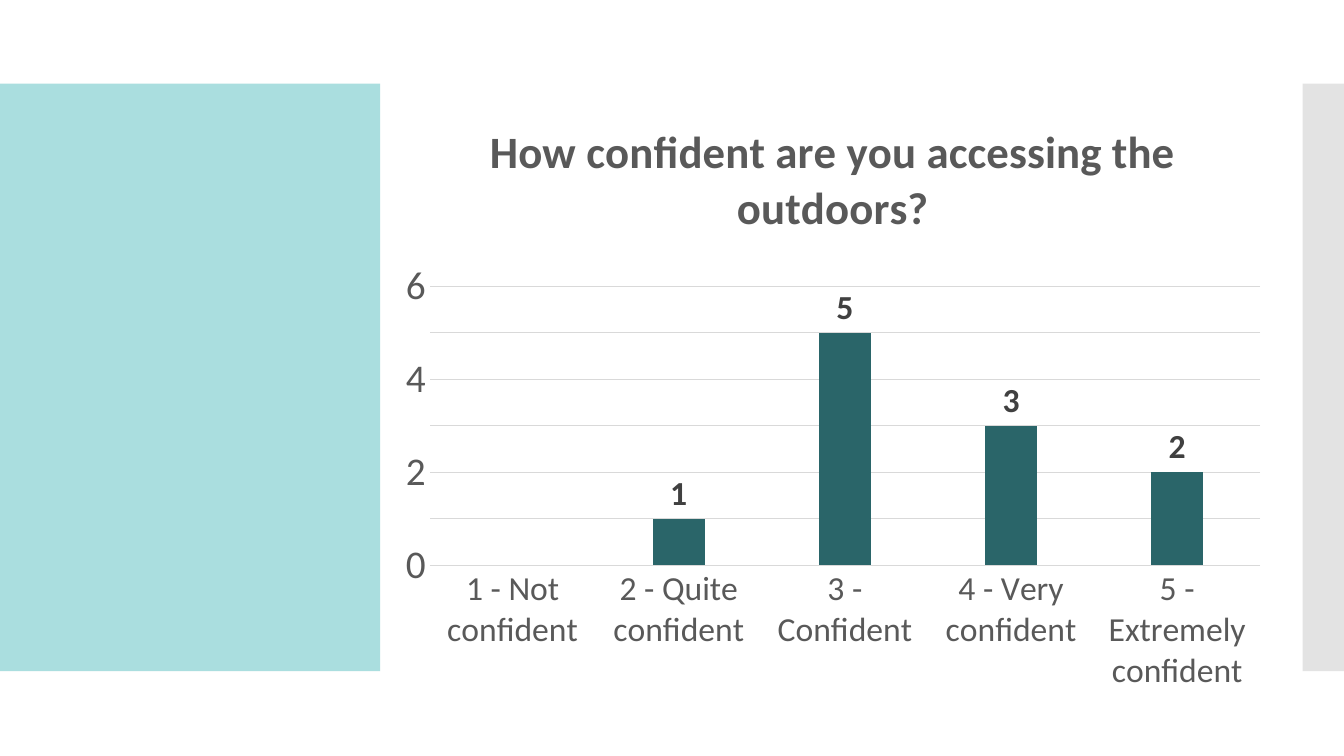
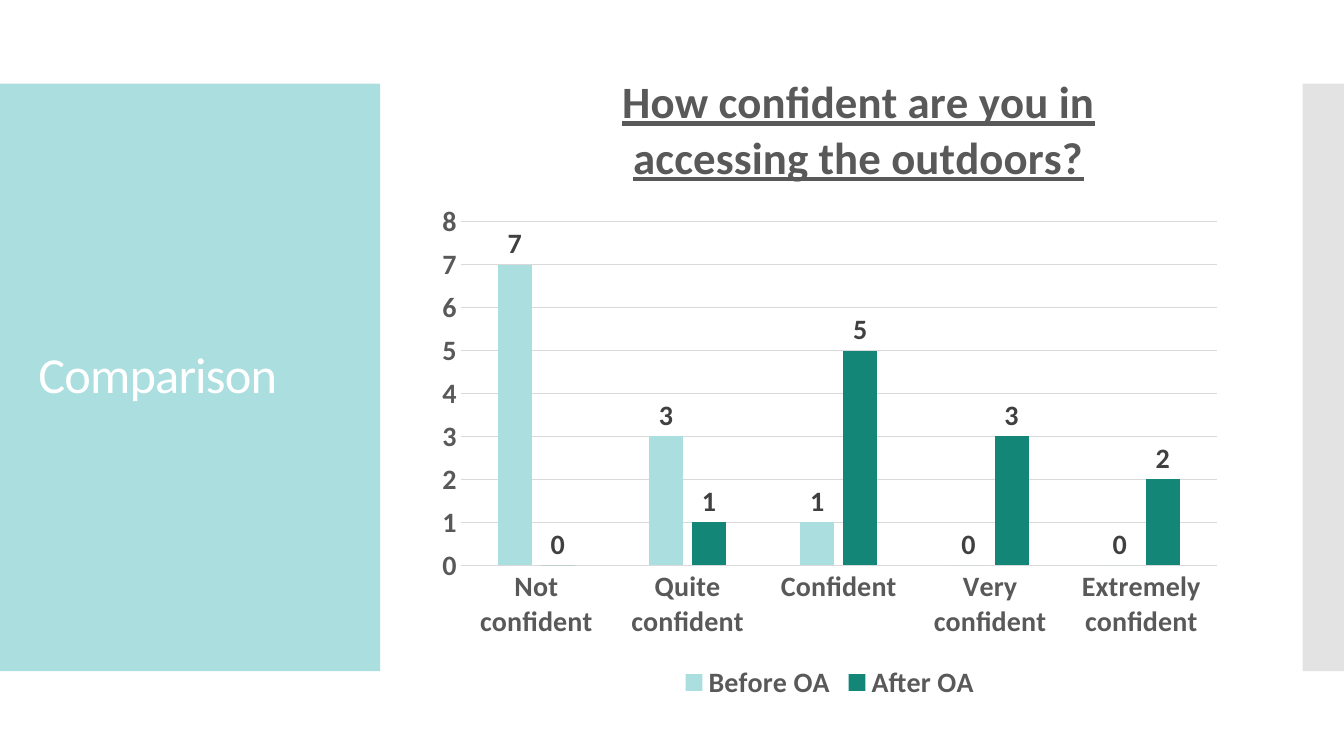
from lxml import etree
from pptx import Presentation
from pptx.chart.data import CategoryChartData
from pptx.dml.color import RGBColor
from pptx.enum.chart import XL_CHART_TYPE as CT, XL_LABEL_POSITION as LP
from pptx.enum.chart import XL_LEGEND_POSITION as LEG, XL_TICK_MARK as TICK
from pptx.enum.shapes import MSO_SHAPE
from pptx.enum.text import MSO_ANCHOR, MSO_AUTO_SIZE, PP_ALIGN
from pptx.oxml.ns import qn
from pptx.util import Inches, Pt

FONT = "Calibri"
AQUA, TEAL, PINE = "AADEDF", "138677", "2A6569"
WHITE, SILVER, RULE = "FFFFFF", "C8C8C8", "D9D9D9"
GREY, DARK = "595959", "404040"
LEVELS = ["Not confident", "Quite confident", "Confident",
          "Very confident", "Extremely confident"]


def rgb(value):
    """Turn a hex string into a colour."""
    return RGBColor.from_string(value)


def style(font, size, color=GREY, bold=False, underline=False):
    """Format a font."""
    font.name, font.size = FONT, Pt(size)
    font.bold, font.underline = bold, underline
    font.color.rgb = rgb(color)


def add_text(p, text, spacing=0, **fmt):
    """Add a formatted run to a paragraph."""
    r = p.add_run()
    r.text = text
    style(r.font, **fmt)
    if spacing:
        r._r.get_or_add_rPr().set("spc", str(round(spacing * 100)))


def add_band(s, box, color, alpha=None):
    """Draw a plain rectangle, see-through if alpha (percent) is given."""
    sp = s.shapes.add_shape(MSO_SHAPE.RECTANGLE, *map(Inches, box))
    sp.shadow.inherit = False
    sp.fill.solid()
    sp.fill.fore_color.rgb = rgb(color)
    sp.line.fill.background()
    if alpha is not None:
        clr = sp._element.spPr.find(".//" + qn("a:srgbClr"))
        etree.SubElement(clr, qn("a:alpha"), val=str(alpha * 1000))


def add_slide(prs, title=None):
    """Add a slide with both side bands and an optional title."""
    s = prs.slides.add_slide(prs.slide_layouts[5 if title else 6])
    add_band(s, (0, 0.83, 3.77, 5.83), AQUA)
    add_band(s, (12.92, 0.83, 0.42, 5.83), SILVER, alpha=50)
    if title:
        add_title(s, title, (0.28, 1.23, 3.22, 5.03))
    return s


def add_title(s, text, box):
    """Place the title on the left band."""
    sp = s.shapes.title
    sp.left, sp.top, sp.width, sp.height = map(Inches, box)
    s.shapes._spTree.append(sp._element)
    tf = sp.text_frame
    tf.word_wrap, tf.auto_size = True, MSO_AUTO_SIZE.NONE
    tf.vertical_anchor = MSO_ANCHOR.MIDDLE
    p = tf.paragraphs[0]
    p.alignment, p.line_spacing = PP_ALIGN.LEFT, 0.9
    add_text(p, text, spacing=-0.6, size=36, color=WHITE)


def set_layout(parent, index, **values):
    """Give a chart part a manual layout, in fractions of the chart."""
    old = parent.find(qn("c:layout"))
    if old is not None:
        parent.remove(old)
    layout = etree.Element(qn("c:layout"))
    manual = etree.SubElement(layout, qn("c:manualLayout"))
    if "w" in values:
        etree.SubElement(manual, qn("c:layoutTarget"), val="inner")
    for key in ("x", "y"):
        etree.SubElement(manual, qn(f"c:{key}Mode"), val="edge")
    for key, value in values.items():
        etree.SubElement(manual, qn(f"c:{key}"), val=f"{value:.4f}")
    parent.insert(index, layout)


def style_axes(chart, top, cat_size, val_size, bold):
    """Format both axes and the gridlines."""
    cat, val = chart.category_axis, chart.value_axis
    for axis, size in ((cat, cat_size), (val, val_size)):
        axis.major_tick_mark = axis.minor_tick_mark = TICK.NONE
        style(axis.tick_labels.font, size, bold=bold)
    val.minimum_scale, val.maximum_scale, val.major_unit = 0, top, 1
    val.has_major_gridlines = True
    val.format.line.fill.background()
    for line in (cat.format.line, val.major_gridlines.format.line):
        line.color.rgb, line.width = rgb(RULE), Pt(0.75)


def add_columns(s, box, plot, title, cats, series, top, cat_size, val_size,
                label_size, bold=False, underline=False, title_at=None,
                legend=False):
    """Add a column chart; plot and title_at are inches from its corner."""
    data = CategoryChartData()
    data.categories = cats
    for name, values, _ in series:
        data.add_series(name, values)
    chart = s.shapes.add_chart(CT.COLUMN_CLUSTERED, *map(Inches, box),
                               data).chart
    style(chart.font, 10, "000000")
    w, h = box[2:]

    chart.has_title = True
    add_text(chart.chart_title.text_frame.paragraphs[0], title, size=32,
             bold=True, underline=underline)
    if title_at:
        set_layout(chart.chart_title._element, 1,
                   x=title_at[0] / w, y=title_at[1] / h)
    set_layout(chart._chartSpace.chart.plotArea, 0, x=plot[0] / w,
               y=plot[1] / h, w=plot[2] / w, h=plot[3] / h)
    style_axes(chart, top, cat_size, val_size, bold)

    columns = chart.plots[0]
    columns.gap_width, columns.overlap = 219, -27
    columns.vary_by_categories = False
    for ser, (_, _, color) in zip(columns.series, series):
        ser.format.fill.solid()
        ser.format.fill.fore_color.rgb = rgb(color)
        ser.invert_if_negative = False
        labels = ser.data_labels
        labels.show_value, labels.position = True, LP.OUTSIDE_END
        style(labels.font, label_size, DARK, bold=True)

    chart.has_legend = legend
    if legend:
        chart.legend.position = LEG.BOTTOM
        chart.legend.include_in_layout = False
        style(chart.legend.font, 20, bold=True)


def confidence_slide(prs):
    """Show how confident people are."""
    question = "How confident are you accessing the outdoors?"
    add_columns(add_slide(prs), (3.84, 0.94, 8.84, 6.04),
                (0.42, 1.9, 8.24, 2.77), question,
                [f"{i} - {level}" for i, level in enumerate(LEVELS, 1)],
                [(question, (None, 1, 5, 3, 2), PINE)], top=6,
                cat_size=24, val_size=28, label_size=24)


def comparison_slide(prs):
    """Compare confidence before and after."""
    add_columns(add_slide(prs, "Comparison"), (4.23, 0.52, 8, 6.48),
                (0.34, 1.68, 7.5, 3.41),
                "How confident are you in accessing the outdoors?", LEVELS,
                [("Before OA", (7, 3, 1, 0, 0), AQUA),
                 ("After OA", (0, 1, 5, 3, 2), TEAL)], top=8,
                cat_size=20, val_size=20, label_size=20, bold=True,
                underline=True, title_at=(1.86, 0.1), legend=True)


def main():
    """Build and save the slides."""
    prs = Presentation()
    prs.slide_width, prs.slide_height = Inches(13.33), Inches(7.5)
    confidence_slide(prs)
    comparison_slide(prs)
    prs.save("out.pptx")


if __name__ == "__main__":
    main()
